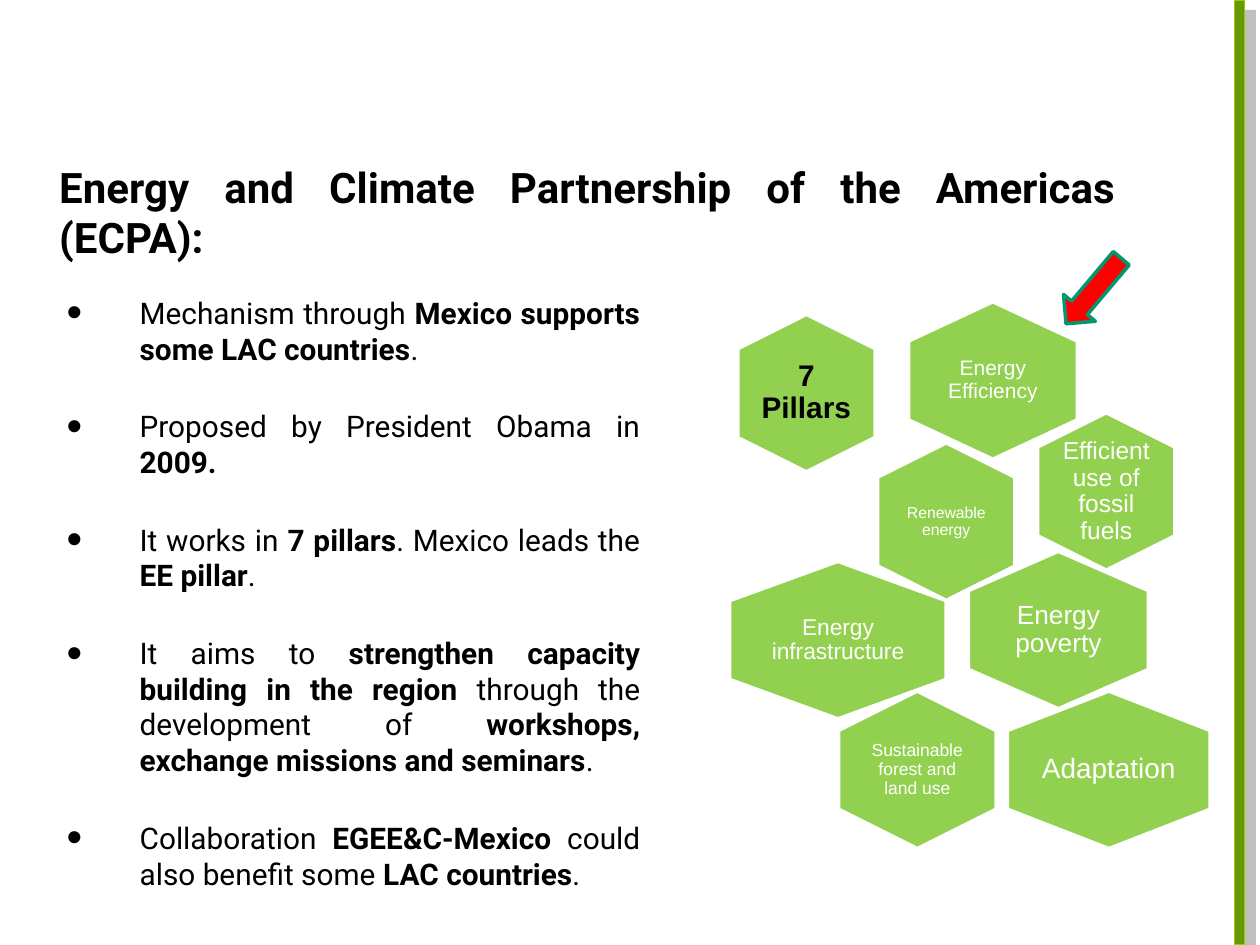
from pptx import Presentation, util as u
from pptx.dml.color import RGBColor
from pptx.enum import shapes, text
from pptx.oxml import parse_xml
from pptx.oxml.ns import nsdecls

W, H = 10, 7.5
COLORS = {
    "bar": "669900", "bar_line": "99CC00", "shadow": "808080",
    "hexagon": "92D050", "arrow": "FF0000", "arrow_line": "009771",
    "black": "000000", "white": "FFFFFF",
}
TITLE = "Energy and Climate Partnership of the Americas (ECPA):"
# Bold passages stand between asterisks.
BULLETS = [
    "Mechanism through *Mexico supports some LAC countries*.",
    "Proposed by President Obama in *2009.*",
    "It works in *7 pillars*. Mexico leads the *EE pillar*.",
    "It aims to *strengthen capacity building in the region *through the "
    "development of *workshops, exchange missions and seminars*.",
    "Collaboration *EGEE&C-Mexico *could also benefit some *LAC countries*.",
]
HEXAGON_HEIGHT, LABEL_HEIGHT = 1.25, 0.84
# label, centre x, centre y, hexagon width, label width, inset, size
PILLARS = [
    ("Energy Efficiency", 7.88, 3.02, 1.34, 0.89, 0.05, 12),
    ("7 Pillars", 6.4, 3.12, 1.09, 0.75, 0, 17),
    ("Renewable energy", 7.51, 4.14, 1.09, 0.75, 0.04, 9),
    ("Efficient use of fossil fuels", 8.78, 3.9, 1.09, 0.75, 0, 14),
    ("Energy poverty", 8.4, 5, 1.43, 0.95, 0.06, 15),
    ("Energy infrastructure", 6.65, 5.08, 1.72, 1.15, 0, 13),
    ("Sustainable forest and land use", 7.28, 6.11, 1.25, 0.83, 0.04, 10),
    ("Adaptation", 8.8, 6.11, 1.61, 1.07, 0, 16),
]
HEADING = "7 Pillars"


def color(name):
    return RGBColor.from_string(COLORS[name])


def assign(obj, **values):
    for name, value in values.items():
        setattr(obj, name, value)


def centred(cx, cy, w, h):
    return [u.Inches(v) for v in (cx - w / 2, cy - h / 2, w, h)]


def add_run(p, content, font, size, fill, bold=False):
    r = p.add_run()
    r.text = content
    assign(r.font, name=font, size=u.Pt(size), bold=bold)
    r.font.color.rgb = color(fill)


def add_solid(parent, kind, place, fill, line, line_width, rotation=0):
    sp = parent.add_shape(kind, *place)
    sp.shadow.inherit = False
    sp.rotation = rotation
    sp.fill.solid()
    sp.fill.fore_color.rgb = color(fill)
    sp.line.color.rgb = color(line)
    sp.line.width = u.Pt(line_width)
    return sp


def add_bar(s):
    place = [u.Inches(v) for v in (9.8, 0, 0.08, H)]
    bar = add_solid(s.shapes, shapes.MSO_SHAPE.RECTANGLE, place, "bar", "bar_line", 0.75)
    effects = bar._element.spPr.find(
        "{http://schemas.openxmlformats.org/drawingml/2006/main}effectLst")
    effects.append(parse_xml(
        f'<a:outerShdw {nsdecls("a")} dist="{u.Pt(8.5)}" dir="2700000">'
        f'<a:srgbClr val="{COLORS["shadow"]}"><a:alpha val="50000"/></a:srgbClr>'
        '</a:outerShdw>'))


def add_title(s):
    title = s.shapes.title
    assign(title, left=u.Inches(0.37), top=u.Inches(1.23),
           width=u.Inches(8.58), height=u.Inches(1.82))
    tf = title.text_frame
    assign(tf, word_wrap=True, vertical_anchor=text.MSO_ANCHOR.TOP,
           auto_size=text.MSO_AUTO_SIZE.SHAPE_TO_FIT_TEXT)
    p = tf.paragraphs[0]
    p.alignment = text.PP_ALIGN.JUSTIFY
    add_run(p, TITLE, "Roboto", 24, "black", True)


def add_bullets(s):
    tf = s.shapes.add_textbox(*[u.Inches(v) for v in (0.43, 2.07, 4.75, 5.27)]).text_frame
    assign(tf, word_wrap=True, vertical_anchor=text.MSO_ANCHOR.MIDDLE)
    indent = u.Inches(0.58)
    for i, item in enumerate(BULLETS):
        p = tf.add_paragraph() if i else tf.paragraphs[0]
        pPr = p._p.get_or_add_pPr()
        pPr.set("marL", str(indent))
        pPr.set("indent", str(-indent))
        for bullet in ('buSzPct val="150000"', 'buFont typeface="Arial"', 'buChar char="•"'):
            tag, attribute = bullet.split(" ", 1)
            pPr.append(parse_xml(f'<a:{tag} {nsdecls("a")} {attribute}/>'))
        assign(p, alignment=text.PP_ALIGN.JUSTIFY,
               space_before=u.Pt(12 if i else 0),
               space_after=u.Pt(12 if i < len(BULLETS) - 1 else 0))
        for j, part in enumerate(item.split("*")):
            if part:
                add_run(p, part, "Roboto", 17, "black", j % 2 == 1)


def add_pillars(s):
    group = s.shapes.add_group_shape().shapes
    for label, cx, cy, width, label_width, inset, size in PILLARS:
        # The hexagon is turned upright, so its width and height swap.
        add_solid(group, shapes.MSO_SHAPE.HEXAGON,
                  centred(cx, cy, HEXAGON_HEIGHT, width), "hexagon", "white", 2, 90)
        tf = group.add_textbox(*centred(cx, cy, label_width, LABEL_HEIGHT)).text_frame
        assign(tf, word_wrap=True, vertical_anchor=text.MSO_ANCHOR.MIDDLE)
        for side in ("left", "top", "right", "bottom"):
            setattr(tf, f"margin_{side}", u.Inches(inset))
        p = tf.paragraphs[0]
        assign(p, alignment=text.PP_ALIGN.CENTER, line_spacing=0.9)
        heading = label == HEADING
        add_run(p, label, "Arial", size, "black" if heading else "white", heading)


def main():
    prs = Presentation()
    assign(prs, slide_width=u.Inches(W), slide_height=u.Inches(H))
    s = prs.slides.add_slide(prs.slide_layouts[5])
    add_bar(s)
    add_title(s)
    add_bullets(s)
    add_pillars(s)
    add_solid(s.shapes, shapes.MSO_SHAPE.DOWN_ARROW, centred(8.68, 2.31, 0.33, 0.68),
              "arrow", "arrow_line", 2, 40.1)
    prs.save("out.pptx")


if __name__ == "__main__":
    main()
